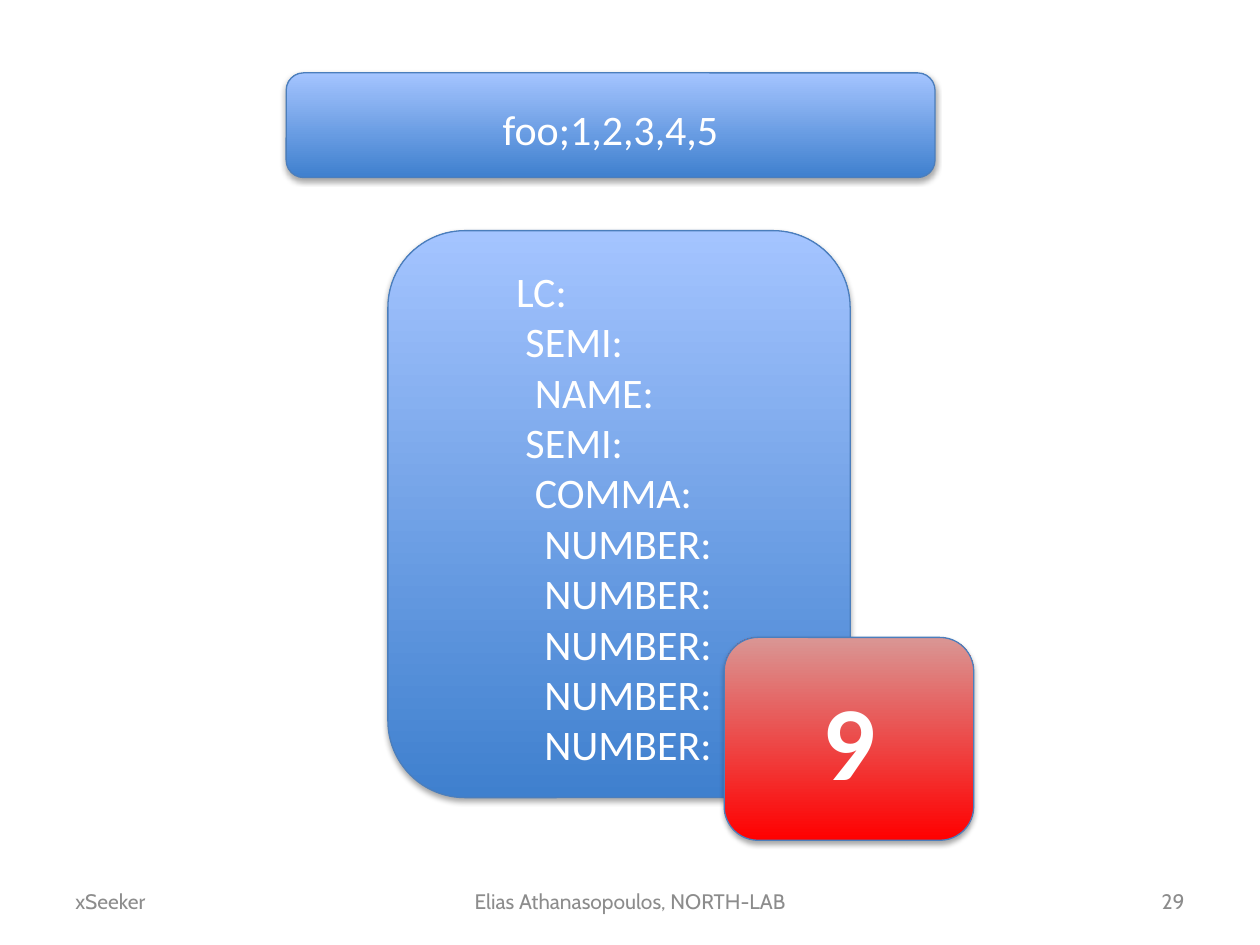
from lxml import etree
from pptx import Presentation
from pptx.dml.color import RGBColor
from pptx.enum.shapes import MSO_SHAPE as SHAPE
from pptx.enum.text import MSO_ANCHOR as ANCHOR, PP_ALIGN as ALIGN
from pptx.oxml import parse_xml
from pptx.oxml.ns import nsdecls
from pptx.util import Cm, Pt

WHITE, GREY, EDGE = "FFFFFF", "8C8C8C", "4B7EBC"
BLUE = ("3F80CE", "A4C4FF")
RED = ("FF0000", "D99694")
INDENT, STEP = 1.88, 0.19

FOOTERS = [
    ("xSeeker", 1.27, 5.92, ALIGN.LEFT),
    ("Elias Athanasopoulos, NORTH-LAB", 8.68, 8.05, ALIGN.CENTER),
    ("29", 18.21, 5.92, ALIGN.RIGHT),
]
SOURCE = [("foo;1,2,3,4,5", 0)]
TREE = [("LC:", 0), ("SEMI:", 1), ("NAME:", 2), ("SEMI:", 1), ("COMMA:", 2)]
TREE += [("NUMBER:", 3)] * 5
COUNT = [("9", 0)]
CARDS = [
    (SOURCE, (5.77, 1.47, 13.08, 2.11), BLUE, 24, False, ALIGN.CENTER, 0.25),
    (TREE, (7.82, 4.65, 9.32, 11.43), BLUE, 24, False, ALIGN.LEFT, 0.25),
    (COUNT, (14.6, 12.85, 5.03, 4.09), RED, 60, True, ALIGN.CENTER, 0.13),
]
SHADOW = (
    f'<a:effectLst {nsdecls("a")}><a:outerShdw blurRad="40000" dist="23000" '
    'dir="5400000" rotWithShape="0"><a:srgbClr val="000000">'
    '<a:alpha val="35000"/></a:srgbClr></a:outerShdw></a:effectLst>'
)


def rgb(value):
    return RGBColor.from_string(value)


def add_run(p, text, font, size, color, bold=False):
    r = p.add_run()
    r.text = text
    r.font.name, r.font.size, r.font.bold = font, Pt(size), bold
    r.font.color.rgb = rgb(color)


def add_footer(s, text, left, width, align):
    tf = s.shapes.add_textbox(Cm(left), Cm(17.65), Cm(width), Cm(1.02)).text_frame
    tf.word_wrap = True
    tf.vertical_anchor = ANCHOR.MIDDLE
    p = tf.paragraphs[0]
    p.alignment = align
    add_run(p, text, "Cabin", 12, GREY)


def add_card(s, lines, box, colors, size, bold, align, top):
    sp = s.shapes.add_shape(SHAPE.ROUNDED_RECTANGLE, *map(Cm, box))
    sp.fill.gradient()
    sp.fill.gradient_angle = 90
    for stop, color in zip(sp.fill.gradient_stops, colors):
        stop.color.rgb = rgb(color)
    sp.line.color.rgb = rgb(EDGE)
    sp.line.width = Pt(0.75)
    sp.shadow.inherit = False
    effects = sp.element.spPr.find("{*}effectLst")
    effects.getparent().replace(effects, parse_xml(SHADOW))
    tf = sp.text_frame
    tf.word_wrap = True
    tf.vertical_anchor = ANCHOR.MIDDLE
    tf.margin_top = Cm(top)
    for i, (text, level) in enumerate(lines):
        p = tf.add_paragraph() if i else tf.paragraphs[0]
        p.alignment = align
        if align == ALIGN.LEFT:
            pPr = p._p.get_or_add_pPr()
            pPr.set("marL", str(Cm(INDENT + STEP * level)))
            pPr.set("indent", "0")
        add_run(p, text, "Calibri", size, WHITE, bold)


prs = Presentation()
prs.slide_width, prs.slide_height = Cm(25.4), Cm(19.05)
s = prs.slides.add_slide(prs.slide_layouts[6])
for footer in FOOTERS:
    add_footer(s, *footer)
for card in CARDS:
    add_card(s, *card)
prs.save("out.pptx")
